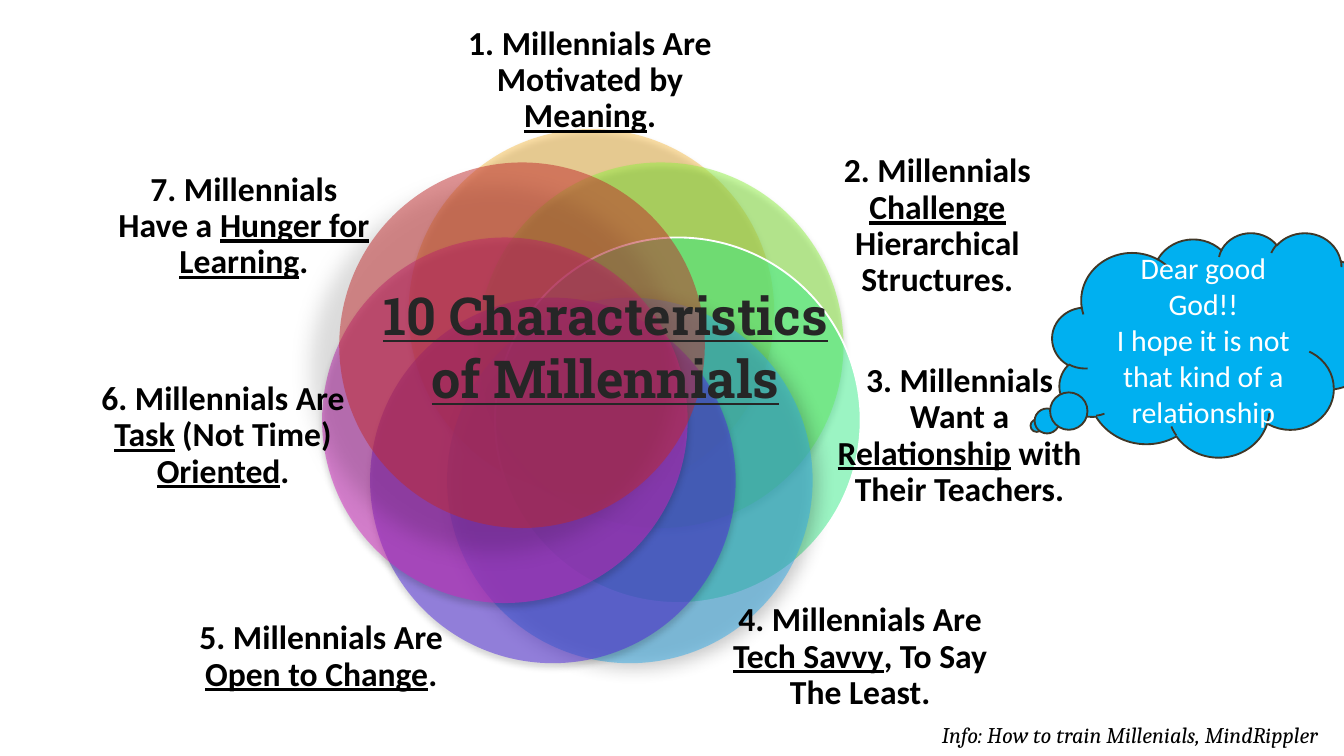
from math import cos, pi, sin

from lxml import etree
from pptx import Presentation
from pptx.dml.color import RGBColor
from pptx.enum.shapes import MSO_SHAPE
from pptx.enum.text import MSO_ANCHOR, MSO_AUTO_SIZE, PP_ALIGN
from pptx.oxml.ns import qn
from pptx.util import Inches, Pt

OVAL = MSO_SHAPE.OVAL
CLOUD = MSO_SHAPE.CLOUD_CALLOUT
CENTER = PP_ALIGN.CENTER
TOP, MIDDLE = MSO_ANCHOR.TOP, MSO_ANCHOR.MIDDLE
FIT_SHAPE, NO_FIT = MSO_AUTO_SIZE.SHAPE_TO_FIT_TEXT, MSO_AUTO_SIZE.NONE

# Widescreen page, 16:9
SLIDE_WIDTH = 10
SLIDE_HEIGHT = SLIDE_WIDTH * 9 / 16

COLORS = {
    "black": "000000", "white": "FFFFFF", "title": "262626",
    "cloud": "00B0F0", "cloud_line": "403727",
    "amber": "F6BE4D", "lime": "90F143", "green": "39EB88", "blue": "31AAE5",
    "indigo": "4F28DE", "magenta": "D126C0", "red": "BF292B",
}

# Shadows: opacity %, blur pt, distance pt, direction in degrees
SOFT = (32, 3.5, 2.2, 90)
DIAGONAL = (45, 10, 3, 45)
WIDE = (28, 11.8, 19.7, 141)

LABEL_FONT = {"name": "Calibri", "size": Pt(18), "bold": True}
CLOUD_FONT = {"name": "Calibri", "size": Pt(16)}
INFO_FONT = {"name": "Cambria", "size": Pt(12), "italic": True}
TITLE_FONT = {"name": "Roboto Slab", "size": Pt(28), "bold": True, "underline": True}

# Ring of circles: box of the middle position, distance from it, diameter
RING_LEFT, RING_TOP, RING_RADIUS, DIAMETER = 3.04, 1.62, 0.66, 2.72

# Circle colour, shadow, label box, label text with underlined words between "_"
PETALS = [
    ("amber", SOFT, (3.38, 0.06, 2.02, 1.08),
     "1. Millennials Are Motivated by _Meaning_."),
    ("lime", SOFT, (6.02, 1.09, 1.91, 1.19),
     "2. Millennials _Challenge_ Hierarchical Structures."),
    ("green", None, (6.2, 2.61, 1.88, 1.27),
     "3. Millennials Want a _Relationship_ with Their Teachers."),
    ("blue", DIAGONAL, (5.39, 4.31, 2.02, 1.16),
     "4. Millennials Are _Tech Savvy_, To Say The Least."),
    ("indigo", SOFT, (1.38, 4.31, 2.02, 1.16),
     "5. Millennials Are _Open to Change_."),
    ("magenta", SOFT, (0.72, 2.61, 1.88, 1.27),
     "6. Millennials Are _Task_ (Not Time) _Oriented_."),
    ("red", WIDE, (0.86, 1.09, 1.91, 1.19),
     "7. Millennials Have a _Hunger for Learning_."),
]


def rgb(color):
    return RGBColor.from_string(COLORS[color])


def inches(box):
    return [Inches(value) for value in box]


def style_font(font, values, color):
    for name, value in values.items():
        setattr(font, name, value)
    font.color.rgb = rgb(color)


def add_color(parent, color, opacity=None):
    element = etree.SubElement(parent, qn("a:srgbClr"), val=COLORS[color])
    if opacity is not None:
        etree.SubElement(element, qn("a:alpha"), val=str(opacity * 1000))


def add_filled_shape(slide, kind, box, color, line=None):
    shape = slide.shapes.add_shape(kind, *inches(box))
    shape.fill.solid()
    shape.fill.fore_color.rgb = rgb(color)
    if line:
        shape.line.color.rgb = rgb(line)
        shape.line.width = Pt(1)
    else:
        shape.line.fill.background()
    shape.shadow.inherit = False
    return shape


def add_circle(slide, index, color, shadow):
    angle = 2 * pi * index / len(PETALS)
    left = RING_LEFT + RING_RADIUS * sin(angle)
    top = RING_TOP - RING_RADIUS * cos(angle)
    circle = add_filled_shape(slide, OVAL, (left, top, DIAMETER, DIAMETER), color,
                              None if shadow else "white")
    properties = circle._element.spPr
    fill_color = properties.find(qn("a:solidFill")).find(qn("a:srgbClr"))
    etree.SubElement(fill_color, qn("a:alpha"), val="50000")
    if shadow:
        opacity, blur, distance, direction = shadow
        outer = etree.SubElement(
            properties.find(qn("a:effectLst")), qn("a:outerShdw"),
            blurRad=str(Pt(blur)), dist=str(Pt(distance)),
            dir=str(direction * 60000), rotWithShape="0")
        add_color(outer, "black", opacity)


def add_label(slide, box, text):
    frame = slide.shapes.add_textbox(*inches(box)).text_frame
    frame.word_wrap = True
    frame.vertical_anchor = MIDDLE
    for side in ("left", "top", "right", "bottom"):
        setattr(frame, f"margin_{side}", 0)
    paragraph = frame.paragraphs[0]
    paragraph.alignment = CENTER
    paragraph.line_spacing = 0.9
    paragraph.space_after = Pt(6.3)
    for position, part in enumerate(text.split("_")):
        run = paragraph.add_run()
        run.text = part
        style_font(run.font, LABEL_FONT, "black")
        run.font.underline = position % 2 == 1


def add_cloud(slide):
    cloud = add_filled_shape(slide, CLOUD, (7.83, 1.73, 2.42, 1.67), "cloud", "cloud_line")
    cloud.adjustments[0] = -0.548
    cloud.adjustments[1] = 0.361
    frame = cloud.text_frame
    frame.word_wrap = True
    frame.vertical_anchor = MIDDLE
    frame.text = "Dear good God!!\nI hope it is not that kind of a relationship"
    for paragraph in frame.paragraphs:
        paragraph.alignment = CENTER
        style_font(paragraph.runs[0].font, CLOUD_FONT, "white")


def add_info(slide):
    frame = slide.shapes.add_textbox(*inches((6.91, 5.32, 3.07, 0.3))).text_frame
    frame.word_wrap = False
    frame.auto_size = FIT_SHAPE
    frame.text = "Info: How to train Millenials, MindRippler"
    style_font(frame.paragraphs[0].runs[0].font, INFO_FONT, "black")


def set_title(slide):
    title = slide.shapes.title
    title.left, title.top, title.width, title.height = inches((2.67, 2.06, 3.67, 1.51))
    frame = title.text_frame
    frame.word_wrap = True
    frame.auto_size = NO_FIT
    frame.vertical_anchor = TOP
    frame.text = "10 Characteristics of Millennials"
    paragraph = frame.paragraphs[0]
    paragraph.alignment = CENTER
    font = paragraph.runs[0].font
    style_font(font, TITLE_FONT, "title")
    # Thin white outline around the letters
    outline = etree.Element(qn("a:ln"), w=str(Pt(1.06)))
    add_color(etree.SubElement(outline, qn("a:solidFill")), "white")
    font._element.insert(0, outline)
    # Bring the title in front of the circles
    slide.shapes._spTree.append(title._element)


def main():
    presentation = Presentation()
    presentation.slide_width = Inches(SLIDE_WIDTH)
    presentation.slide_height = Inches(SLIDE_HEIGHT)
    slide = presentation.slides.add_slide(presentation.slide_layouts[5])

    # Overlapping circles with their labels
    for index, (color, shadow, box, text) in enumerate(PETALS):
        add_circle(slide, index, color, shadow)
        add_label(slide, box, text)

    # Thought bubble, footer and title
    add_cloud(slide)
    add_info(slide)
    set_title(slide)
    presentation.save("out.pptx")


if __name__ == "__main__":
    main()
